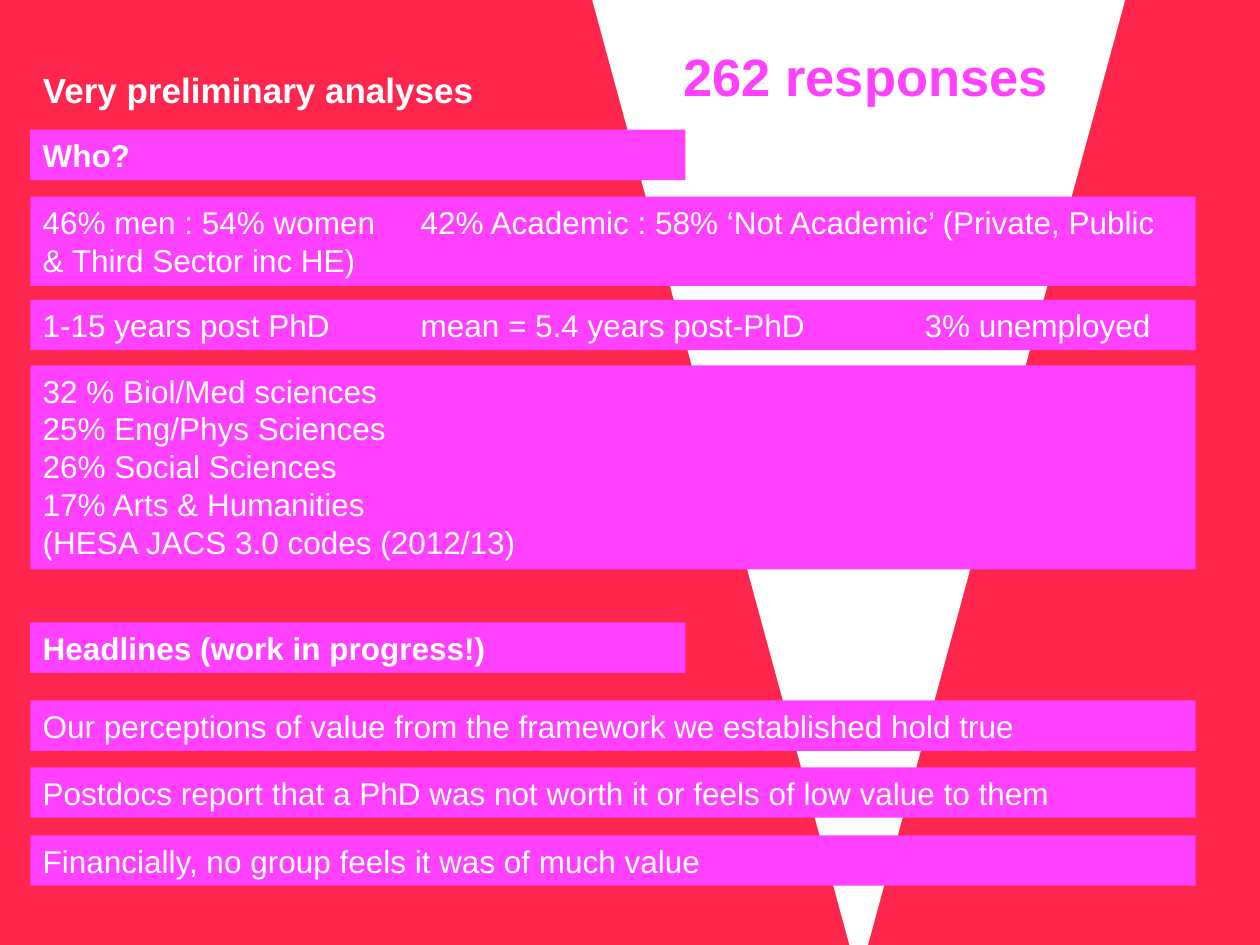
from dataclasses import dataclass

from pptx import Presentation
from pptx.dml.color import RGBColor
from pptx.enum.shapes import MSO_SHAPE
from pptx.enum.text import MSO_ANCHOR, MSO_AUTO_SIZE, PP_ALIGN
from pptx.util import Inches, Pt


@dataclass(frozen=True)
class Theme:
    """Colours, font and type sizes of the slide."""

    red: RGBColor = RGBColor(0xFF, 0x26, 0x4D)
    pink: RGBColor = RGBColor(0xFF, 0x40, 0xFF)
    white: RGBColor = RGBColor(0xFF, 0xFF, 0xFF)
    font: str = "Arial"
    body: int = 18
    title: int = 20
    callout: int = 30


THEME = Theme()
LEFT = 0.24
HEADING_WIDTH = 5.2
BAND_WIDTH = 9.25
LINE_HEIGHT = 0.4

HEADINGS = [
    (1.03, "Who?"),
    (4.94, "Headlines (work in progress!)"),
]
BANDS = [
    (1.56, 0.71, "46% men : 54% women\t42% Academic : 58% ‘Not Academic’ "
                 "(Private, Public & Third Sector inc HE)"),
    (2.38, LINE_HEIGHT, "1-15 years post PhD\t\tmean = 5.4 years post-PhD\t\t3% unemployed"),
    (2.9, 1.62, "32 % Biol/Med sciences\n25% Eng/Phys Sciences\n26% Social Sciences\n"
                "17% Arts & Humanities\n(HESA JACS 3.0 codes (2012/13)"),
    (5.56, LINE_HEIGHT, "Our perceptions of value from the framework we established hold true"),
    (6.09, LINE_HEIGHT, "Postdocs report that a PhD was not worth it or feels of low value to them"),
    (6.63, LINE_HEIGHT, "Financially, no group feels it was of much value"),
]


def write_text(shape, text, size, color, bold=False, alignment=PP_ALIGN.LEFT):
    """Fill a shape with formatted text that starts at its top."""
    text_frame = shape.text_frame
    text_frame.text = text
    text_frame.word_wrap = True
    text_frame.auto_size = MSO_AUTO_SIZE.SHAPE_TO_FIT_TEXT
    text_frame.vertical_anchor = MSO_ANCHOR.TOP
    for paragraph in text_frame.paragraphs:
        paragraph.alignment = alignment
        for run in paragraph.runs:
            run.font.name = THEME.font
            run.font.size = Pt(size)
            run.font.bold = bold
            run.font.color.rgb = color


def add_filled_shape(slide, kind, left, top, width, height, color):
    """Add a preset shape with a plain fill and no outline."""
    shape = slide.shapes.add_shape(
        kind, Inches(left), Inches(top), Inches(width), Inches(height))
    shape.shadow.inherit = False
    shape.fill.solid()
    shape.fill.fore_color.rgb = color
    shape.line.fill.background()
    return shape


def add_band(slide, top, width, height, text, bold=False):
    """Add a pink band with white text."""
    band = add_filled_shape(
        slide, MSO_SHAPE.RECTANGLE, LEFT, top, width, height, THEME.pink)
    write_text(band, text, THEME.body, THEME.white, bold)


def set_title(slide, text):
    """Place and format the title placeholder."""
    title = slide.shapes.title
    title.left, title.top = Inches(LEFT), Inches(0.49)
    title.width, title.height = Inches(5), Inches(0.44)
    write_text(title, text, THEME.title, THEME.white, bold=True)


def add_callout(slide, text):
    """Add the large centred figure over the funnel."""
    callout = slide.shapes.add_textbox(
        Inches(4.97), Inches(0.3), Inches(3.8), Inches(0.61))
    write_text(callout, text, THEME.callout, THEME.pink, True, PP_ALIGN.CENTER)


def main():
    """Build and save the slide."""
    presentation = Presentation()
    presentation.slide_width, presentation.slide_height = Inches(10), Inches(7.5)
    slide = presentation.slides.add_slide(presentation.slide_layouts[5])
    slide.background.fill.solid()
    slide.background.fill.fore_color.rgb = THEME.red

    funnel = add_filled_shape(
        slide, MSO_SHAPE.ISOSCELES_TRIANGLE, 4.7, 0, 4.23, 7.77, THEME.white)
    funnel.rotation = 180
    set_title(slide, "Very preliminary analyses")
    for top, text in HEADINGS:
        add_band(slide, top, HEADING_WIDTH, LINE_HEIGHT, text, bold=True)
    for top, height, text in BANDS:
        add_band(slide, top, BAND_WIDTH, height, text)
    add_callout(slide, "262 responses")

    presentation.save("out.pptx")


if __name__ == "__main__":
    main()
